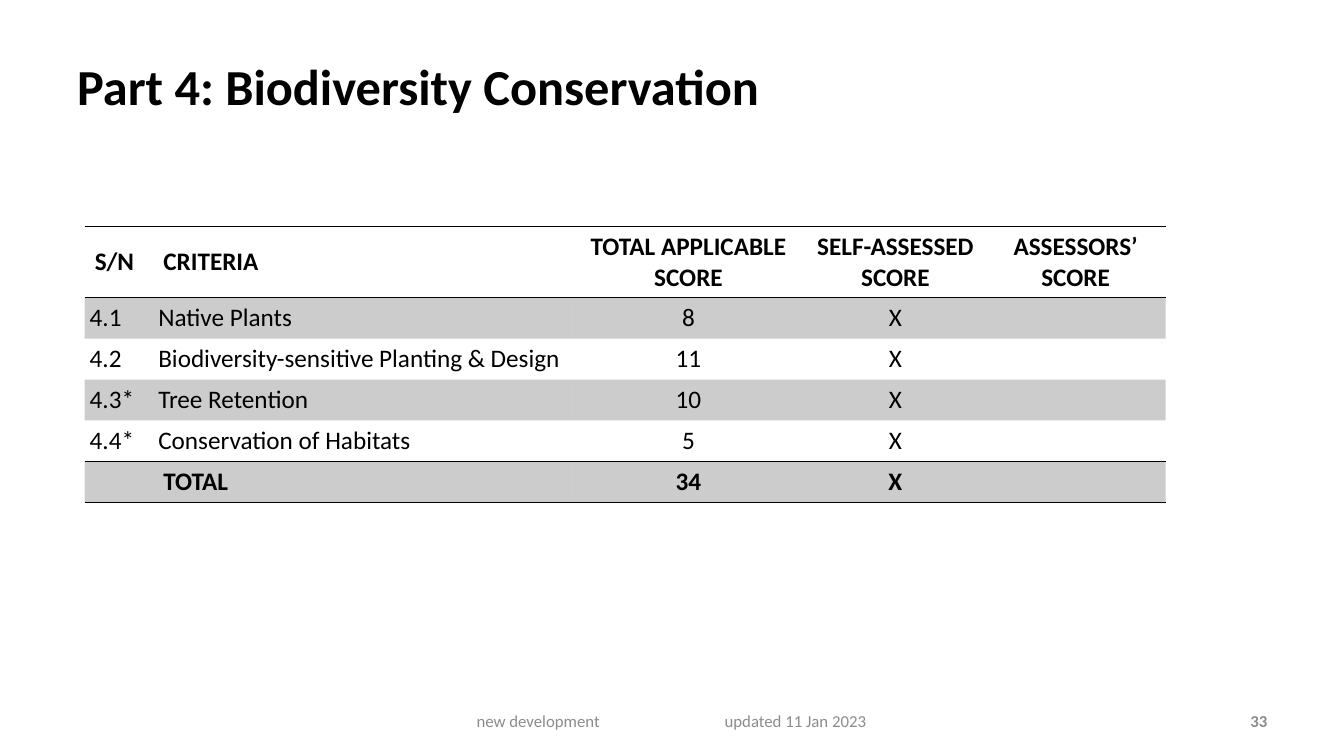
from lxml import etree
from pptx import Presentation
from pptx.dml.color import RGBColor
from pptx.enum import text
from pptx.oxml import ns
from pptx.util import Pt

COLORS = {"ink": "000000", "muted": "8C8C8C"}
FONT = "Calibri"
LEFT, CENTER, RIGHT = text.PP_ALIGN.LEFT, text.PP_ALIGN.CENTER, text.PP_ALIGN.RIGHT
MIDDLE, BOTTOM = text.MSO_ANCHOR.MIDDLE, text.MSO_ANCHOR.BOTTOM
NO_GRID_STYLE = "{2D5ABB26-0587-4C30-8999-92F81FD0307C}"

COLUMN_WIDTHS = [49, 298.8, 167, 128.7, 128.7]
ROWS = [
    ["S/N", "CRITERIA", "TOTAL APPLICABLE SCORE", "SELF-ASSESSED SCORE", "ASSESSORS’ SCORE"],
    ["4.1", "Native Plants", "8", "X", ""],
    ["4.2", "Biodiversity-sensitive Planting & Design", "11", "X", ""],
    ["4.3*", "Tree Retention", "10", "X", ""],
    ["4.4*", "Conservation of Habitats", "5", "X", ""],
    ["", "TOTAL", "34", "X", ""],
]


def style_paragraph(p, size, color, bold, align):
    p.alignment = align
    p.font.name = FONT
    p.font.size = Pt(size)
    p.font.bold = bold
    p.font.color.rgb = RGBColor.from_string(COLORS[color])


def add_tab_stop(p, position):
    tabs = etree.SubElement(p._p.get_or_add_pPr(), ns.qn("a:tabLst"))
    etree.SubElement(tabs, ns.qn("a:tab"), pos=str(Pt(position)), algn="l")


def add_text(s, box, words, size, color="ink", bold=False, align=LEFT, tab=None):
    tf = s.shapes.add_textbox(*map(Pt, box)).text_frame
    tf.word_wrap = True
    tf.vertical_anchor = MIDDLE
    p = tf.paragraphs[0]
    p.text = words
    if tab:
        add_tab_stop(p, tab)
    style_paragraph(p, size, color, bold, align)


def shade(cell):
    cell.fill.solid()
    cell.fill.fore_color.rgb = RGBColor.from_string(COLORS["ink"])
    color = cell._tc.tcPr.find(".//" + ns.qn("a:srgbClr"))
    etree.SubElement(color, ns.qn("a:alpha"), val="20000")


def add_rules(cell, sides):
    tcPr = cell._tc.get_or_add_tcPr()
    for i, side in enumerate(sides):
        ln = etree.Element(ns.qn("a:ln" + side), w=str(Pt(1)))
        fill = etree.SubElement(ln, ns.qn("a:solidFill"))
        etree.SubElement(fill, ns.qn("a:srgbClr"), val=COLORS["ink"])
        tcPr.insert(i, ln)


def fill_cell(cell, words, row, col):
    last = len(ROWS) - 1
    outer = row in (0, last)
    label = col < 2 and not outer
    cell.vertical_anchor = BOTTOM if label else MIDDLE
    if label:
        cell.margin_left = cell.margin_right = Pt(3.6)
    p = cell.text_frame.paragraphs[0]
    p.text = words
    style_paragraph(p, 18, "ink", outer, LEFT if col < 2 else CENTER)
    if row % 2:
        shade(cell)
    else:
        cell.fill.background()
    if outer:
        add_rules(cell, "TB")
    elif row == last - 1:
        add_rules(cell, "B")


def add_score_table(s, left, top):
    frame = s.shapes.add_table(len(ROWS), len(COLUMN_WIDTHS), Pt(left), Pt(top),
                               Pt(sum(COLUMN_WIDTHS)), Pt(196.7))
    table = frame.table
    table._tbl.tblPr.find(ns.qn("a:tableStyleId")).text = NO_GRID_STYLE
    for column, width in zip(table.columns, COLUMN_WIDTHS):
        column.width = Pt(width)
    for i, row in enumerate(ROWS):
        table.rows[i].height = Pt(29.2 if i else 50.7)
        for j, words in enumerate(row):
            fill_cell(table.cell(i, j), words, i, j)


def main():
    prs = Presentation()
    prs.slide_width, prs.slide_height = Pt(960), Pt(540)
    s = prs.slides.add_slide(prs.slide_layouts[6])
    add_text(s, (48, 21.6, 746, 78.5), "Part 4: Biodiversity Conservation", 36, bold=True)
    add_score_table(s, 60.5, 162)
    add_text(s, (333.3, 500.4, 298.7, 28.8), "new development\tupdated 11 Jan 2023", 12,
             "muted", tab=177.2)
    add_text(s, (688.3, 500.4, 224, 28.8), "33", 12, "muted", bold=True, align=RIGHT)
    prs.save("out.pptx")


if __name__ == "__main__":
    main()
